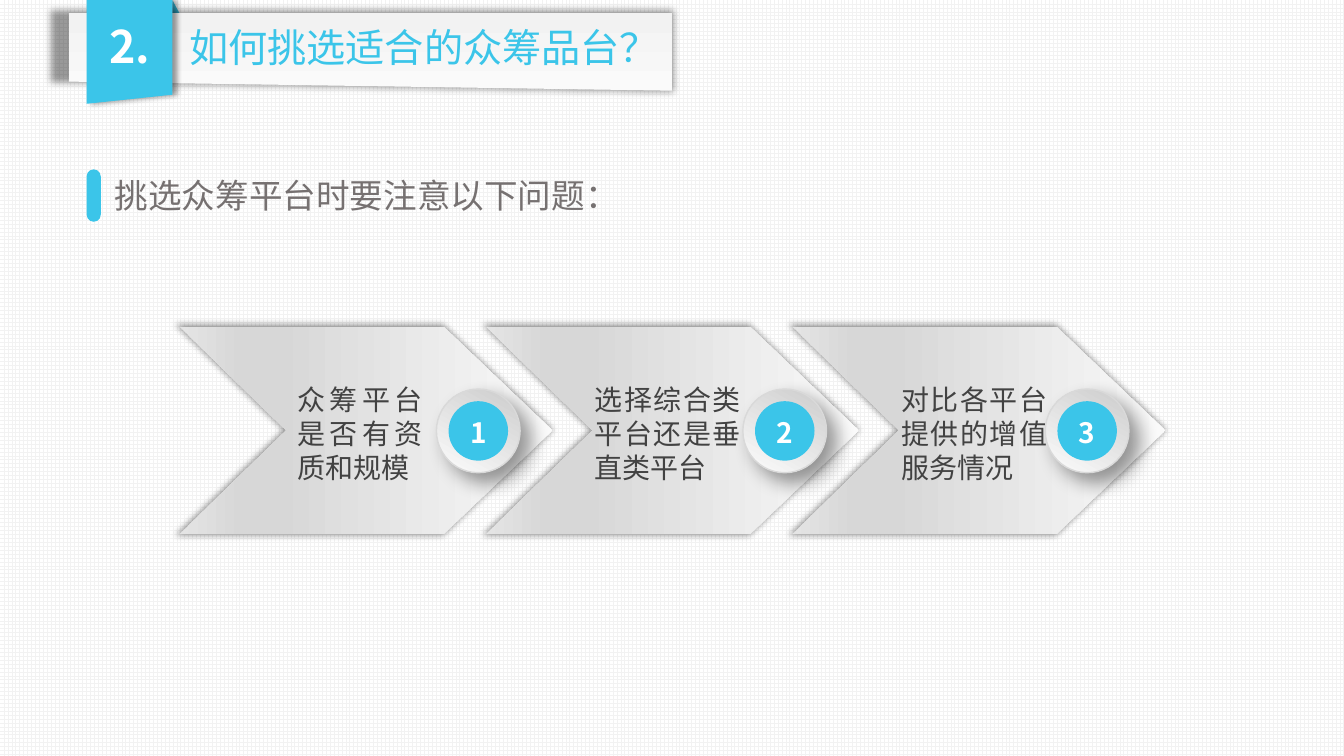
import pptx
import pptx.util
import pptx.dml.color
import pptx.enum.dml
import pptx.enum.shapes
import pptx.enum.text
import pptx.oxml.ns
from lxml import etree

RGB = pptx.dml.color.RGBColor
BLUE = RGB(0x3B, 0xC5, 0xE9)
WHITE = RGB(0xFF, 0xFF, 0xFF)
MIST = RGB(0xF2, 0xF2, 0xF2)
PALE = RGB(0xFA, 0xFA, 0xFA)
SILVER = RGB(0xD7, 0xD7, 0xD7)
EDGE = RGB(0xE4, 0xE4, 0xE4)
RIM = RGB(0xD9, 0xD9, 0xD9)
STEEL = RGB(0xCC, 0xCC, 0xCC)
SHINE = RGB(0xFC, 0xFC, 0xFC)
GREY = RGB(0x76, 0x71, 0x71)
DARK = RGB(0x42, 0x42, 0x42)
FONT = "Noto Sans CJK SC"
KIND = pptx.enum.shapes.MSO_SHAPE
ALIGN = pptx.enum.text.PP_ALIGN
qn = pptx.oxml.ns.qn

# Grid: ten cells to the inch, 133.3 columns by 75 rows
CELL = pptx.util.Inches(0.1)


def cells(*spans):
    return [round(span * CELL) for span in spans]


def style(shape, fill, angle=0, shadow=None):
    """Fill with a colour or (place, colour) stops; shadow is blur, gap, angle, scale."""
    shape.line.fill.background()
    shape.shadow.inherit = False
    props = shape.element.spPr
    if isinstance(fill, RGB):
        shape.fill.solid()
        shape.fill.fore_color.rgb = fill
    else:
        shape.fill.gradient()
        grad = props.find(qn("a:gradFill"))
        stops = grad.find(qn("a:gsLst"))
        for stop in list(stops):
            stops.remove(stop)
        for place, color in fill:
            stop = etree.SubElement(stops, qn("a:gs"), pos=str(place * 1000))
            etree.SubElement(stop, qn("a:srgbClr"), val=str(color))
        grad.find(qn("a:lin")).set("ang", str(angle * 60000))
    if shadow:
        blur, gap, turn, scale = shadow
        cast = etree.SubElement(
            props.find(qn("a:effectLst")), qn("a:outerShdw"),
            blurRad=str(pptx.util.Pt(blur)), dist=str(pptx.util.Pt(gap)),
            dir=str(turn * 60000), sx=str(scale * 1000), sy=str(scale * 1000),
            algn="br", rotWithShape="0")
        tint = etree.SubElement(cast, qn("a:srgbClr"), val="000000")
        etree.SubElement(tint, qn("a:alpha"), val="40000")


deck = pptx.Presentation()
deck.slide_width, deck.slide_height = cells(133.33, 75)
slide = deck.slides.add_slide(deck.slide_layouts[6])
shapes = slide.shapes

# Background grid
back = slide.background.fill
back.patterned()
back.pattern = pptx.enum.dml.MSO_PATTERN.LARGE_GRID
back.fore_color.rgb = MIST
back.back_color.rgb = WHITE

# Fold behind the ribbon
fold = shapes.add_shape(KIND.RIGHT_TRIANGLE, *cells(17.1, 0, 0.7, 1.3))
style(fold, BLUE)

# Title banner, ribbon and chevrons
chrome = [(0, EDGE), (17, SILVER), (26, SILVER), (100, PALE)]
plates = [
    ([(66.7, 1.3), (6.8, 1.3), (6.8, 8.1), (66.7, 9)],
     [(0, PALE), (100, MIST)], 270, (5, 0, 0, 103)),
    ([(17.1, 0), (17.1, 9.4), (8.6, 10.3), (8.6, 0)], BLUE, 0, (4, 3, 0, 100)),
]
STEP = 30.4
for num in range(3):
    left = 17.8 + num * STEP
    plates.append((
        [(left, 32.4), (left + 26.2, 32.4), (left + 37, 42.7),
         (left + 26.2, 53), (left, 53), (left + 10.6, 42.7)],
        chrome, 0, (5, 0, 0, 101)))
for points, fill, angle, shadow in plates:
    spots = [cells(*point) for point in points]
    pen = shapes.build_freeform(*spots[0], scale=1.0)
    pen.add_line_segments(spots[1:], close=True)
    style(pen.convert_to_shape(), fill, angle, shadow)

# Heading marker
bar = shapes.add_shape(KIND.ROUNDED_RECTANGLE, *cells(8.6, 16.8, 1.4, 5.2))
bar.adjustments[0] = 0.5
style(bar, BLUE)

# Texts: words, place, size, colour, bold, alignment
texts = [
    ("2.", (8.8, 1.4, 8.2, 6.4), 32, WHITE, True, ALIGN.CENTER),
    ("如何挑选适合的众筹品台？", (17.8, 1.8, 49.6, 5.7), 28, BLUE, False, ALIGN.LEFT),
    ("挑选众筹平台时要注意以下问题：", (10.4, 16.9, 112.5, 5), 24, GREY, False, ALIGN.LEFT),
]

# Numbered buttons and chevron labels
items = [
    (43.3, 28.5, 14.4, "众筹平台是否有资质和规模"),
    (73.7, 58, 16.5, "选择综合类平台还是垂直类平台"),
    (103.7, 88.4, 16.5, "对比各平台提供的增值服务情况"),
]
for num, (left, start, width, words) in enumerate(items, 1):
    ring = shapes.add_shape(KIND.OVAL, *cells(left, 38.6, 8.3, 8.3))
    style(ring, [(0, STEEL), (100, SHINE)], 120, (14, 10, 45, 100))
    ring.line.color.rgb = RIM
    ring.line.width = pptx.util.Pt(1)
    disc = shapes.add_shape(KIND.OVAL, *cells(left + 1.2, 39.8, 5.9, 5.9))
    style(disc, BLUE)
    texts.append((str(num), (left + 1.4, 40.7, 5.5, 4.4), 20, WHITE, True, ALIGN.CENTER))
    texts.append((words, (start, 37.5, width, 11.1), 20, DARK, False, ALIGN.JUSTIFY))

for words, place, size, color, bold, align in texts:
    frame = shapes.add_textbox(*cells(*place)).text_frame
    frame.word_wrap = True
    frame.auto_size = pptx.enum.text.MSO_AUTO_SIZE.SHAPE_TO_FIT_TEXT
    frame.text = words
    line = frame.paragraphs[0]
    line.alignment = align
    font = line.runs[0].font
    font.size = pptx.util.Pt(size)
    font.bold = bold
    font.color.rgb = color
    font.name = FONT
    etree.SubElement(line.runs[0].font._element, qn("a:ea"), typeface=FONT)

deck.save("out.pptx")
